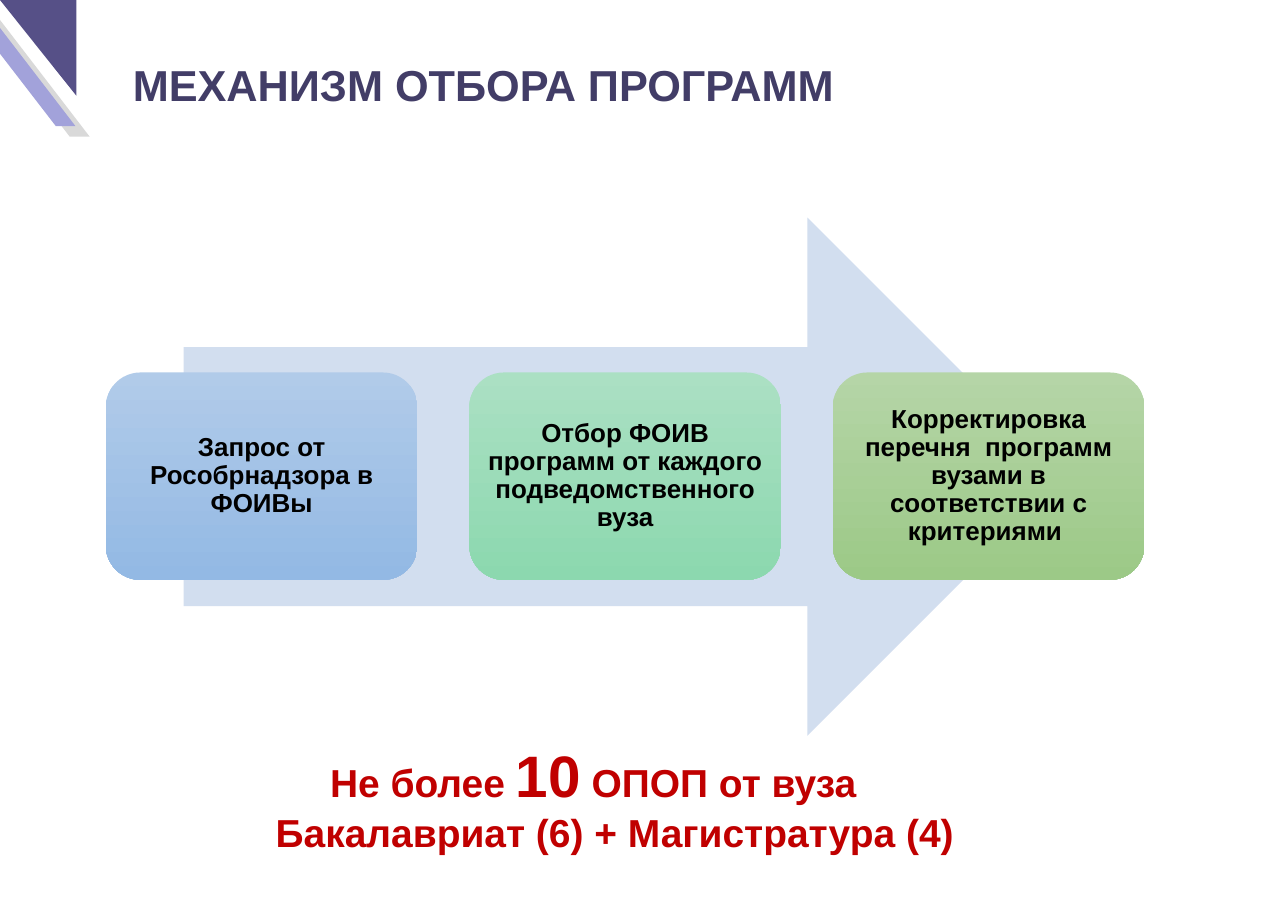
from pptx import Presentation
from pptx.dml.color import RGBColor
from pptx.enum.shapes import MSO_SHAPE
from pptx.enum.text import MSO_ANCHOR, PP_ALIGN
from pptx.util import Cm, Pt

BLACK = RGBColor(0x00, 0x00, 0x00)
GREY = RGBColor(0xD9, 0xD9, 0xD9)
LAVENDER = RGBColor(0xA2, 0xA2, 0xDA)
VIOLET = RGBColor(0x56, 0x50, 0x87)
TITLE = RGBColor(0x42, 0x3D, 0x67)
RED = RGBColor(0xC0, 0x00, 0x00)
ARROW = RGBColor(0xD2, 0xDE, 0xEF)
BLUE = RGBColor(0xB1, 0xCB, 0xE9), RGBColor(0x93, 0xB9, 0xE4)
MINT = RGBColor(0xAB, 0xE0, 0xC3), RGBColor(0x8C, 0xD8, 0xAF)
GREEN = RGBColor(0xB5, 0xD5, 0xA7), RGBColor(0x9C, 0xC9, 0x87)


class Deck:
    font = "Arial"

    def __init__(self, width, height):
        self.prs = Presentation()
        self.prs.slide_width, self.prs.slide_height = Cm(width), Cm(height)
        self.s = self.prs.slides.add_slide(self.prs.slide_layouts[6])

    def style(self, p, size, color):
        p.font.name, p.font.size, p.font.bold = self.font, Pt(size), True
        p.font.color.rgb = color

    def plain(self, sp):
        sp.shadow.inherit = False
        sp.line.fill.background()
        return sp

    def solid(self, sp, color):
        self.plain(sp).fill.solid()
        sp.fill.fore_color.rgb = color

    def polygon(self, points, color):
        pts = [(Cm(x), Cm(y)) for x, y in points]
        builder = self.s.shapes.build_freeform(*pts[0])
        builder.add_line_segments(pts[1:], close=True)
        self.solid(builder.convert_to_shape(), color)

    def arrow(self, x, y, w, h, color):
        self.solid(self.s.shapes.add_shape(
            MSO_SHAPE.RIGHT_ARROW, Cm(x), Cm(y), Cm(w), Cm(h)), color)

    def card(self, x, y, w, h, text, colors):
        sp = self.plain(self.s.shapes.add_shape(
            MSO_SHAPE.ROUNDED_RECTANGLE, Cm(x), Cm(y), Cm(w), Cm(h)))
        sp.fill.gradient()
        sp.fill.gradient_angle = 270
        for stop, color in zip(sp.fill.gradient_stops, colors):
            stop.color.rgb = color
        tf = sp.text_frame
        tf.word_wrap, tf.vertical_anchor = True, MSO_ANCHOR.MIDDLE
        tf.margin_left = tf.margin_right = Cm(0.25)
        tf.margin_top = tf.margin_bottom = Cm(0.25)
        p = tf.paragraphs[0]
        p.text, p.alignment, p.line_spacing = text, PP_ALIGN.CENTER, 0.9
        self.style(p, 24, BLACK)

    def text(self, x, y, w, h, lines, size, color):
        """Each line is a list of (text, size or None) runs."""
        tf = self.s.shapes.add_textbox(Cm(x), Cm(y), Cm(w), Cm(h)).text_frame
        tf.word_wrap = True
        for i, runs in enumerate(lines):
            p = tf.add_paragraph() if i else tf.paragraphs[0]
            self.style(p, size, color)
            for text, run_size in runs:
                r = p.add_run()
                r.text = text
                if run_size:
                    r.font.size = Pt(run_size)
        return tf


def main():
    deck = Deck(41.99, 29.69)

    # Corner ornament
    deck.polygon([(0, 0.65), (2.92, 4.45), (2.27, 4.45), (0, 1.49)], GREY)
    deck.polygon([(0, 0.91), (2.46, 4.11), (1.82, 4.11), (0, 1.75)], LAVENDER)
    deck.polygon([(0, 0), (2.49, 0), (2.49, 3.12)], VIOLET)

    # Process arrow with its three steps
    deck.arrow(5.99, 7.09, 28.78, 16.89, ARROW)
    steps = [
        ("Запрос от Рособрнадзора в ФОИВы", BLUE),
        ("Отбор ФОИВ программ от каждого подведомственного вуза", MINT),
        ("Корректировка перечня  программ вузами в соответствии с критериями ",
         GREEN),
    ]
    for i, (text, colors) in enumerate(steps):
        deck.card(3.45 + 11.85 * i, 12.14, 10.16, 6.76, text, colors)

    # Title
    tf = deck.text(3.94, 1.78, 32.94, 1.96,
                   [[("МЕХАНИЗМ ОТБОРА ПРОГРАММ", None)]], 40, TITLE)
    tf.margin_left = Cm(0.39)

    # Limit on programmes, first line indented
    tf = deck.text(8.74, 23.95, 22.83, 4.11, [
        [("Не более ", None), ("10", 54), (" ОПОП от вуза", None)],
        [("Бакалавриат (6) + Магистратура (4)", None)],
    ], 36, RED)
    tf.paragraphs[0]._p.get_or_add_pPr().set("indent", str(Cm(1.77)))

    deck.prs.save("out.pptx")


if __name__ == "__main__":
    main()
